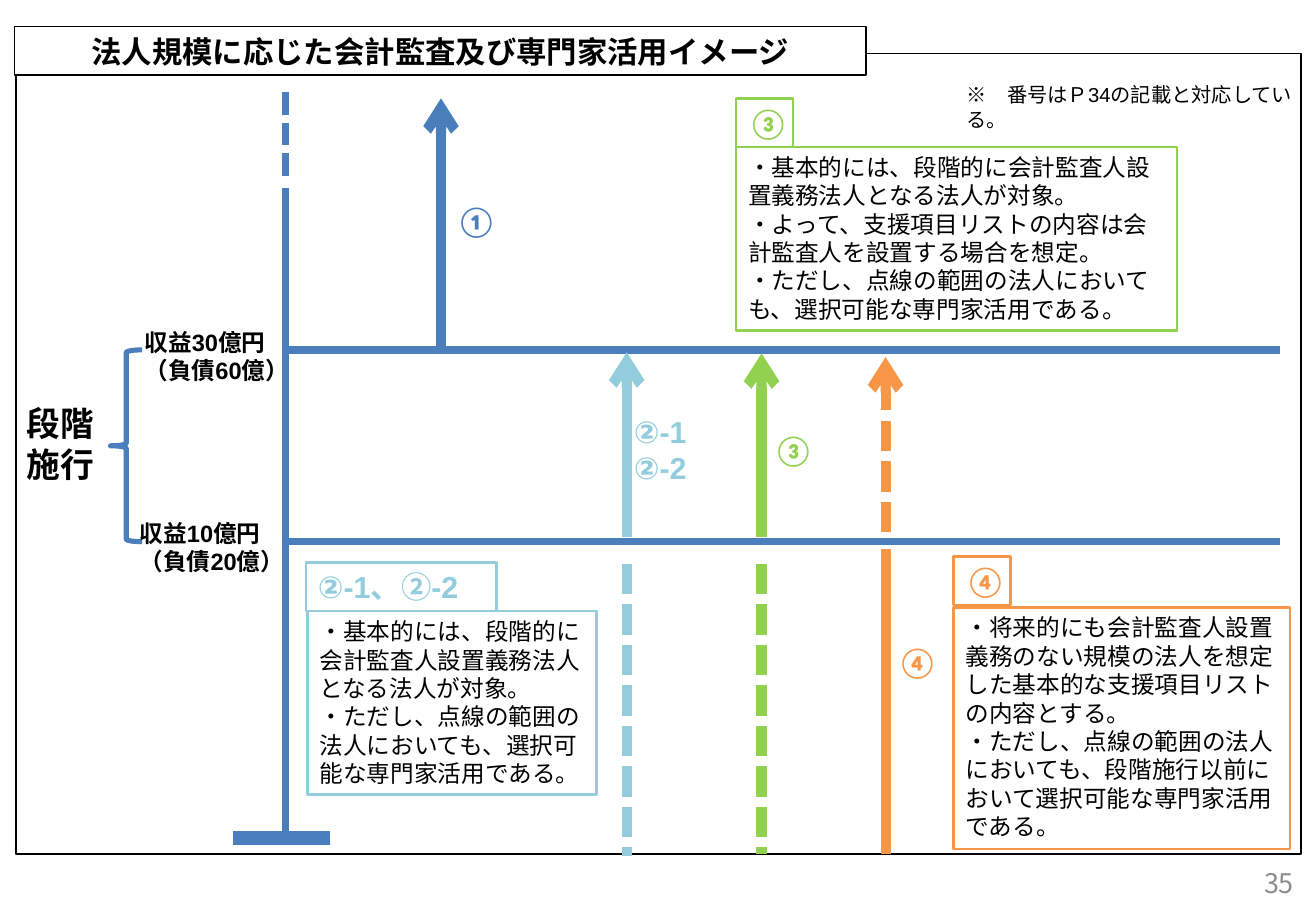
from pptx import Presentation
from pptx.dml.color import RGBColor
from pptx.enum.dml import MSO_LINE
from pptx.enum.shapes import MSO_CONNECTOR, MSO_SHAPE
from pptx.enum.text import MSO_ANCHOR, MSO_AUTO_SIZE, PP_ALIGN
from pptx.oxml.ns import qn
from pptx.util import Pt
from lxml.etree import SubElement

BLACK, WHITE, GREY = "000000", "FFFFFF", "8C8C8C"
NAVY, BLUE = "4A7EBB", "4B7EBC"
SKY, GREEN, ORANGE = "93CDDD", "92D050", "F79646"

AXIS_X, RIGHT_X = 169.2, 758.9
UPPER_Y, LOWER_Y = 207.4, 321.1  # revenue thresholds
BASE_Y, FLOOR_Y = 496.8, 506.2

TITLE = "法人規模に応じた会計監査及び専門家活用イメージ"
NOTE = "※　番号はＰ34の記載と対応している。"
TARGET = "・基本的には、段階的に会計監査人設置義務法人となる法人が対象。"
OPTION = "・ただし、点線の範囲の法人においても、選択可能な専門家活用である。"

# from, to, colour, width, dashed, arrowhead
LINES = [
    ((AXIS_X, 111.6), (AXIS_X, BASE_Y), NAVY, 4.5, False, False),
    ((AXIS_X, 54.7), (AXIS_X, 105.1), BLUE, 4.5, True, False),
    ((RIGHT_X, UPPER_Y), (167, UPPER_Y), BLUE, 4.5, False, False),
    ((RIGHT_X, LOWER_Y), (AXIS_X, LOWER_Y), BLUE, 4.5, False, False),
    ((195.8, BASE_Y), (138.2, BASE_Y), BLUE, 8, False, False),
    ((261.4, UPPER_Y), (261.4, 58.3), NAVY, 6, False, True),
    ((371.5, 318.2), (371.5, 208.8), SKY, 6, False, True),
    ((371.5, 334.1), (371.5, 507.6), SKY, 6, True, False),
    ((451.4, 318.2), (451.4, 209.5), GREEN, 6, False, True),
    ((451.4, 334.1), (451.4, FLOOR_Y), GREEN, 6, True, False),
    ((524.9, 325.4), (524.9, FLOOR_Y), ORANGE, 6, False, False),
    ((524.9, 315.4), (524.9, 211.7), ORANGE, 6, True, True),
]

# place, paragraphs, format
LABELS = [
    ((78.5, 190.8, 107.3, 41), ["収益30億円", "（負債60億）"], dict(size=14, bold=True)),
    ((75.6, 303.8, 107.3, 41), ["収益10億円", "（負債20億）"], dict(size=14, bold=True)),
    ((-2.9, 235.4, 77.8, 55.4), ["段階", "施行"],
     dict(size=20, bold=True, align=PP_ALIGN.CENTER)),
    ((263.5, 116.6, 31, 28.8), ["①"], dict(font="Calibri", color=NAVY, bold=True)),
    ((368.6, 241.2, 58.3, 51.1), ["②-1", "②-2"], dict(color=SKY, bold=True)),
    ((451.4, 252, 31, 28.8), ["③"], dict(font="Calibri", color=GREEN, bold=True)),
    ((524.9, 378, 31, 28.8), ["④"], dict(font="Calibri", color=ORANGE, bold=True)),
    ((696.2, 509.8, 77.8, 26.6), ["35"],
     dict(font="Noto Sans CJK JP", size=16, color=GREY, align=PP_ALIGN.RIGHT,
          anchor=MSO_ANCHOR.MIDDLE)),
    ((565.9, 45.4, 209.5, 21.6), [NOTE], dict(size=12)),
]

# colour, tab text, tab font, tab place, body place, body paragraphs
CALLOUTS = [
    (ORANGE, "④", "Calibri", (565.2, 329.8, 33.8, 28.8), (565.2, 360, 199.4, 143.3),
     ["・将来的にも会計監査人設置義務のない規模の法人を想定した基本的な支援項目リストの内容とする。",
      "・ただし、点線の範囲の法人においても、段階施行以前において選択可能な専門家活用である。"]),
    (GREEN, "③", "Calibri", (436.3, 58.3, 33.8, 28.8), (436.3, 87.1, 261.4, 108.7),
     [TARGET, "・よって、支援項目リストの内容は会計監査人を設置する場合を想定。", OPTION]),
    (SKY, "②-1、②-2", "Arial", (181.4, 333.4, 113, 28.8), (182.2, 362.2, 171.4, 108.7),
     [TARGET, OPTION]),
]


def rgb(value):
    return RGBColor.from_string(value)


def write(shape, lines, font="Arial", size=18, color=BLACK, bold=False,
          align=PP_ALIGN.LEFT, anchor=MSO_ANCHOR.TOP):
    """Fill a shape with one paragraph per line."""
    frame = shape.text_frame
    frame.word_wrap = True
    frame.auto_size = MSO_AUTO_SIZE.SHAPE_TO_FIT_TEXT
    frame.vertical_anchor = anchor
    for index, line in enumerate(lines):
        para = frame.paragraphs[0] if index == 0 else frame.add_paragraph()
        para.alignment = align
        span = para.add_run()
        span.text = line
        span.font.name, span.font.size, span.font.bold = font, Pt(size), bold
        span.font.color.rgb = rgb(color)


def add_outline(page, place, color, width, fill=None, kind=MSO_SHAPE.RECTANGLE):
    shape = page.shapes.add_shape(kind, *map(Pt, place))
    shape.shadow.inherit = False
    if fill:
        shape.fill.solid()
        shape.fill.fore_color.rgb = rgb(fill)
    else:
        shape.fill.background()
    shape.line.color.rgb = rgb(color)
    shape.line.width = Pt(width)
    return shape


def add_line(page, start, end, color, width, dashed, arrow):
    link = page.shapes.add_connector(MSO_CONNECTOR.STRAIGHT, *map(Pt, start + end))
    link.line.color.rgb = rgb(color)
    link.line.width = Pt(width)
    if dashed:
        link.line.dash_style = MSO_LINE.SQUARE_DOT
        link.line._ln.find(qn("a:prstDash")).set("val", "sysDash")
    if arrow:
        SubElement(link.line._ln, qn("a:tailEnd")).set("type", "arrow")
    SubElement(link._element.spPr, qn("a:effectLst"))


def main():
    deck = Presentation()
    deck.slide_width, deck.slide_height = Pt(780), Pt(540)
    page = deck.slides.add_slide(deck.slide_layouts[6])

    add_outline(page, (9.4, 31.7, 761.8, 474.5), BLACK, 1, WHITE)
    title = add_outline(page, (8.6, 15.8, 504.7, 28.8), BLACK, 1, WHITE)
    write(title, [TITLE], bold=True, align=PP_ALIGN.CENTER, anchor=MSO_ANCHOR.MIDDLE)

    for line in LINES:
        add_line(page, *line)
    add_outline(page, (65.5, UPPER_Y, 18.7, LOWER_Y - UPPER_Y), BLUE, 3,
                kind=MSO_SHAPE.LEFT_BRACE)
    for place, lines, style in LABELS:
        write(page.shapes.add_textbox(*map(Pt, place)), lines, **style)
    for color, mark, font, tab, body, lines in CALLOUTS:
        write(add_outline(page, body, color, 1.5), lines, font="Calibri", size=14)
        write(add_outline(page, tab, color, 1.5), [mark], font=font, color=color, bold=True)

    deck.save("out.pptx")


if __name__ == "__main__":
    main()
